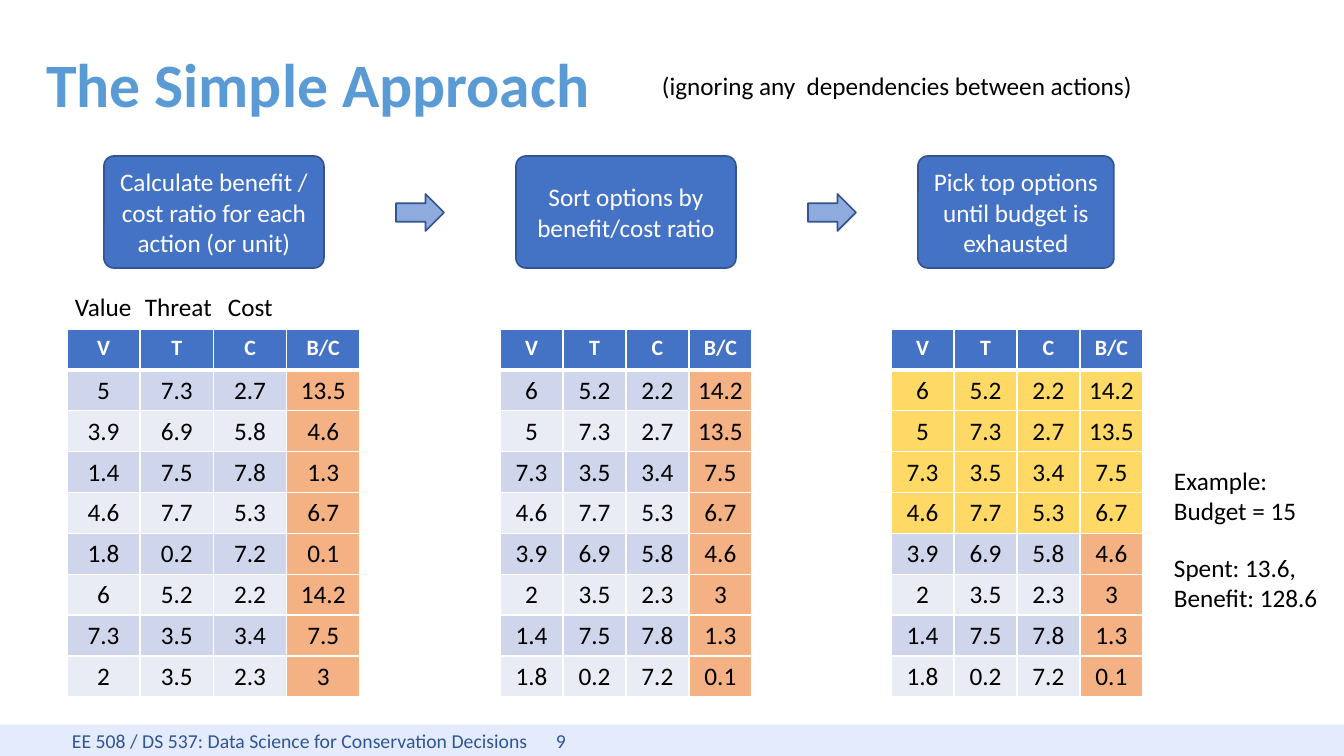
from pptx import Presentation
from pptx.dml.color import RGBColor
from pptx.enum.shapes import MSO_SHAPE
from pptx.enum.text import MSO_ANCHOR, PP_ALIGN
from pptx.oxml.ns import qn
from pptx.util import Pt
from lxml import etree

PX = 7557  # EMU in one px
LEFT, CENTER = PP_ALIGN.LEFT, PP_ALIGN.CENTER
TOP, MIDDLE = MSO_ANCHOR.TOP, MSO_ANCHOR.MIDDLE
RECTANGLE, ROUNDED = MSO_SHAPE.RECTANGLE, MSO_SHAPE.ROUNDED_RECTANGLE
RIGHT_ARROW = MSO_SHAPE.RIGHT_ARROW

BLACK = RGBColor(0x00, 0x00, 0x00)
WHITE = RGBColor(0xFF, 0xFF, 0xFF)
TITLE_BLUE = RGBColor(0x5B, 0x9B, 0xD5)
BLUE = RGBColor(0x44, 0x72, 0xC4)
OUTLINE_BLUE = RGBColor(0x32, 0x54, 0x91)
ARROW_BLUE = RGBColor(0x8F, 0xAA, 0xDC)
FOOTER_FILL = RGBColor(0xE3, 0xEB, 0xFC)
FOOTER_TEXT = RGBColor(0x2F, 0x55, 0x97)
BANDS = [RGBColor(0xCF, 0xD5, 0xEA), RGBColor(0xE9, 0xEB, 0xF5)]
RATIO_ORANGE = RGBColor(0xF4, 0xB1, 0x83)
PICKED_YELLOW = RGBColor(0xFF, 0xD9, 0x66)


def write(frame, lines, size=15, color=BLACK, bold=False, align=LEFT, tabs=(), **frame_format):
    layout = {"word_wrap": True, "vertical_anchor": TOP,
              "margin_left": 10 * PX, "margin_right": 10 * PX,
              "margin_top": 5 * PX, "margin_bottom": 5 * PX}
    layout.update(frame_format)
    for name, value in layout.items():
        setattr(frame, name, value)
    for index, line in enumerate(lines):
        para = frame.add_paragraph() if index else frame.paragraphs[0]
        para.alignment = align
        if tabs:
            stops = etree.SubElement(para._p.get_or_add_pPr(), qn("a:tabLst"))
            for stop in tabs:
                etree.SubElement(stops, qn("a:tab"), pos=str(stop * PX), algn="l")
        span = para.add_run()
        span.text = line
        span.font.color.rgb = color
        for name, value in {"name": "Calibri", "size": Pt(size), "bold": bold}.items():
            setattr(span.font, name, value)


def add_block(kind, left, top, width, height, fill, line=None):
    block = page.shapes.add_shape(kind, left * PX, top * PX, width * PX, height * PX)
    block.shadow.inherit = False
    block.fill.solid()
    block.fill.fore_color.rgb = fill
    if line is None:
        block.line.fill.background()
    else:
        block.line.color.rgb = line
        block.line.width = Pt(1)
    return block


deck = Presentation()
deck.slide_width, deck.slide_height = 1344 * PX, 756 * PX
page = deck.slides.add_slide(deck.slide_layouts[5])

# Footer band
footer = add_block(RECTANGLE, 0, 725, 1344, 31, FOOTER_FILL)
write(footer.text_frame, ["EE 508 / DS 537: Data Science for Conservation Decisions\t9"],
      size=11.7, color=FOOTER_TEXT, tabs=[484], vertical_anchor=MIDDLE,
      margin_left=72 * PX, margin_top=0, margin_bottom=0)

# Title
title = page.shapes.title
for name, value in {"left": 36, "top": 35, "width": 1281, "height": 105}.items():
    setattr(title, name, value * PX)
write(title.text_frame, ["The Simple Approach"], size=36.7, color=TITLE_BLUE,
      bold=True, vertical_anchor=MIDDLE)
title.text_frame.paragraphs[0].line_spacing = 0.9

# Step boxes and the arrows between them
steps = [
    (104, 220, "Calculate benefit / cost ratio for each action (or unit)"),
    (516, 220, "Sort options by benefit/cost ratio"),
    (918, 196, "Pick top options until budget is exhausted"),
]
for left, width, label in steps:
    step = add_block(ROUNDED, left, 156, width, 112, BLUE, OUTLINE_BLUE)
    step.adjustments[0] = 0.09
    write(step.text_frame, [label], color=WHITE, align=CENTER, vertical_anchor=MIDDLE)
for left in (396, 808):
    add_block(RIGHT_ARROW, left, 194, 48, 37, ARROW_BLUE, OUTLINE_BLUE)

# Option tables: as listed, sorted by ratio, and with the top picks marked
header = ["V", "T", "C", "B/C"]
options = [
    (5, 7.3, 2.7, 13.5),
    (3.9, 6.9, 5.8, 4.6),
    (1.4, 7.5, 7.8, 1.3),
    (4.6, 7.7, 5.3, 6.7),
    (1.8, 0.2, 7.2, 0.1),
    (6, 5.2, 2.2, 14.2),
    (7.3, 3.5, 3.4, 7.5),
    (2, 3.5, 2.3, 3),
]
ranked = sorted(options, key=lambda option: option[3], reverse=True)
for left, width, rows, picked in [(67, 293, options, 0), (500, 252, ranked, 0),
                                  (891, 252, ranked, 4)]:
    table = page.shapes.add_table(len(rows) + 1, len(header), left * PX, 329 * PX,
                                  width * PX, 368 * PX).table
    for row, values in enumerate([header] + rows):
        for column, value in enumerate(values):
            cell = table.cell(row, column)
            # White borders, thick under the header
            thick_side = {0: "lnB", 1: "lnT"}.get(row)
            for side in ("lnL", "lnR", "lnT", "lnB"):
                weight = 3 if side == thick_side else 1
                border = etree.SubElement(cell._tc.get_or_add_tcPr(), qn("a:" + side),
                                          w=str(Pt(weight)))
                paint = etree.SubElement(border, qn("a:solidFill"))
                etree.SubElement(paint, qn("a:srgbClr"), val=str(WHITE))
            if row == 0:
                fill = BLUE
            elif row <= picked:
                fill = PICKED_YELLOW
            else:
                fill = RATIO_ORANGE if column == 3 else BANDS[(row - 1) % 2]
            cell.fill.solid()
            cell.fill.fore_color.rgb = fill
            if row == 0:
                write(cell.text_frame, [value], size=13, color=WHITE, bold=True, align=CENTER)
            else:
                write(cell.text_frame, [f"{value:g}"], align=CENTER)
                cell.vertical_anchor = MIDDLE
                for name, margin in {"left": 1, "right": 1, "top": 1, "bottom": 0}.items():
                    setattr(cell, "margin_" + name, margin * PX)

# Notes around the tables
notes = [
    (652, 65, 541, 42, ["(ignoring any  dependencies between actions)"], ()),
    (1164, 460, 154, 74, ["Example:", "Budget = 15"], ()),
    (1164, 547, 177, 74, ["Spent: 13.6, Benefit: 128.6"], ()),
    (65, 286, 234, 42, ["Value\tThreat\tCost"], (70, 153)),
]
for left, top, width, height, lines, tabs in notes:
    note = page.shapes.add_textbox(left * PX, top * PX, width * PX, height * PX)
    write(note.text_frame, lines, tabs=tabs)

deck.save("out.pptx")
